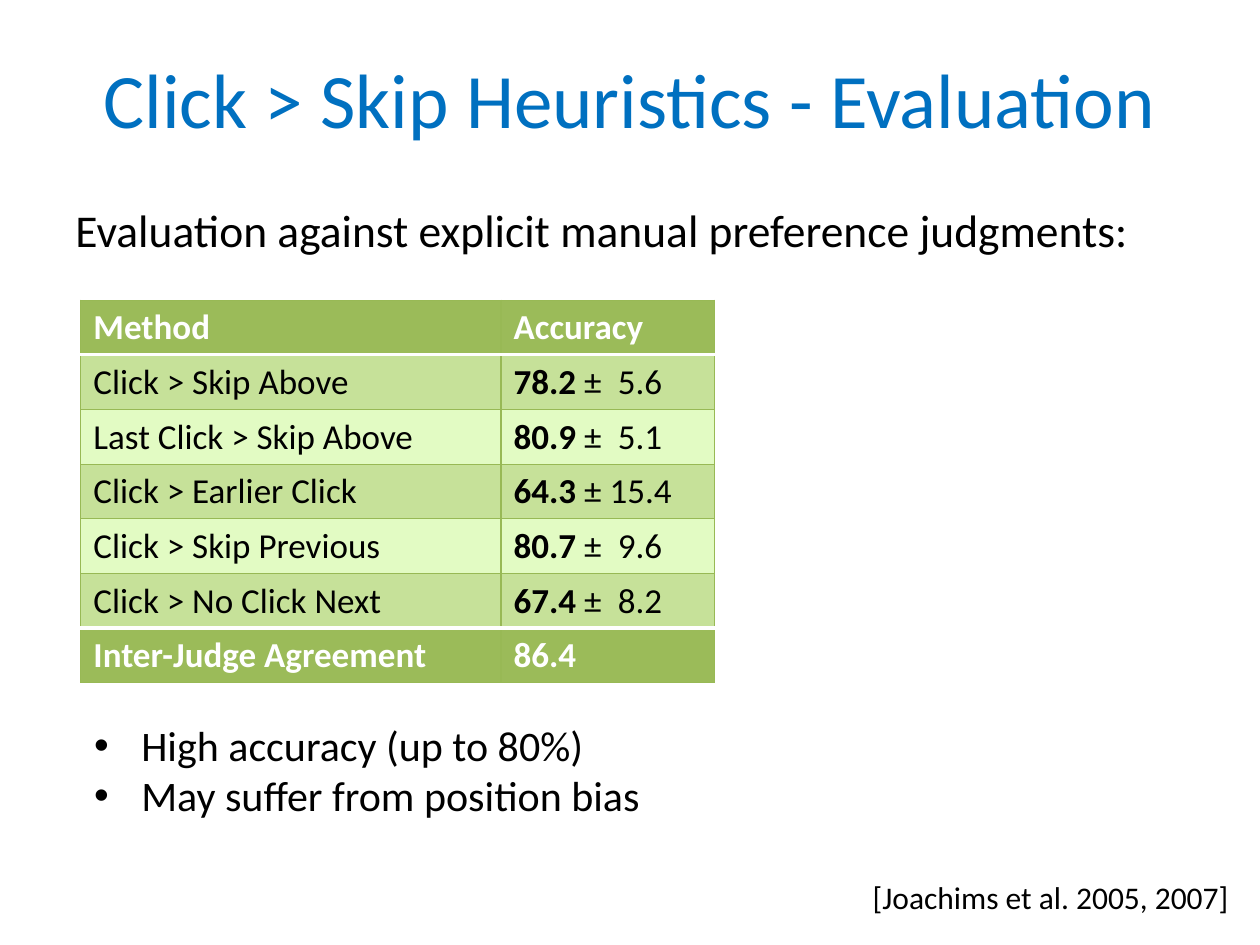
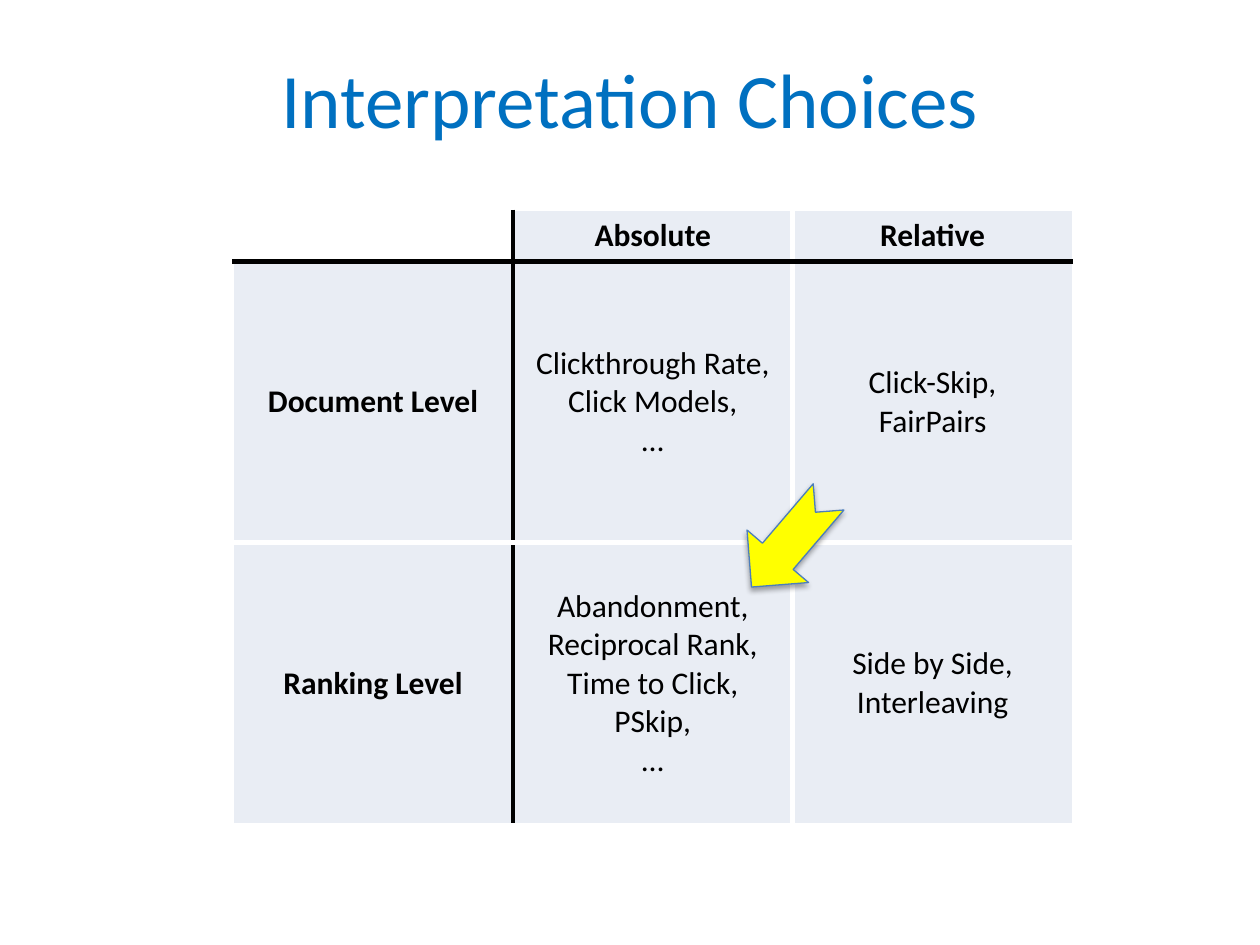
from lxml.etree import SubElement
from pptx import Presentation
from pptx.dml.color import RGBColor
from pptx.enum.shapes import MSO_SHAPE
from pptx.enum.text import MSO_ANCHOR, PP_ALIGN
from pptx.oxml.ns import qn
from pptx.util import Cm, Pt

FONT = "Calibri"
BLACK, WHITE, BLUE = "000000", "FFFFFF", "0070C0"
GREEN, RIM, DARK, LIGHT = "9BBB59", "98B955", "C6E199", "E2FBC3"
PALE, YELLOW, EDGE = "E9EDF4", "FFFF00", "4B7EBC"

SCORES = [
    ("Click > Skip Above", "78.2", "5.6"),
    ("Last Click > Skip Above", "80.9", "5.1"),
    ("Click > Earlier Click", "64.3", "15.4"),
    ("Click > Skip Previous", "80.7", "9.6"),
    ("Click > No Click Next", "67.4", "8.2"),
]
CHOICES = [
    [[], ["Absolute"], ["Relative"]],
    [["Document Level"],
     ["Clickthrough Rate,", "Click Models,", "…"],
     ["Click-Skip,", "FairPairs"]],
    [["Ranking Level"],
     ["Abandonment,", "Reciprocal Rank,", "Time to Click,", "PSkip,", "…"],
     ["Side by Side,", "Interleaving"]],
]


def hue(code):
    """Turn a hex string into a colour."""
    return RGBColor.from_string(code)


def place(box):
    """Turn left, top, width and height in centimetres into lengths."""
    return [Cm(part) for part in box]


def write(para, text, size, color=BLACK, bold=False):
    """Add one formatted run to a paragraph."""
    run = para.add_run()
    run.text = text
    font = run.font
    font.name, font.size, font.bold = FONT, Pt(size), bold
    font.color.rgb = hue(color)


def fill_lines(frame, lines, size, align=PP_ALIGN.LEFT, bold=False):
    """Write each line as a paragraph and return the paragraphs."""
    paras = []
    for i, line in enumerate(lines):
        para = frame.add_paragraph() if i else frame.paragraphs[0]
        para.alignment = align
        write(para, line, size, bold=bold)
        paras.append(para)
    return paras


def add_text(slide, box, lines, size, align=PP_ALIGN.LEFT):
    """Add a wrapping text box and return its paragraphs."""
    frame = slide.shapes.add_textbox(*place(box)).text_frame
    frame.word_wrap = True
    return fill_lines(frame, lines, size, align)


def add_slide(deck, title):
    """Add a title-only slide with the shared title style."""
    slide = deck.slides.add_slide(deck.slide_layouts[5])
    head = slide.shapes.title
    head.left, head.top, head.width, head.height = place((1.27, 0.76, 22.86, 2.41))
    frame = head.text_frame
    frame.vertical_anchor = MSO_ANCHOR.MIDDLE
    frame.paragraphs[0].alignment = PP_ALIGN.CENTER
    write(frame.paragraphs[0], title, 44, BLUE)
    return slide


def add_grid(slide, box, widths, heights):
    """Add a plain table with the given column widths and row heights."""
    table = slide.shapes.add_table(len(heights), len(widths), *place(box)).table
    table.first_row = table.horz_banding = False
    for col, width in zip(table.columns, widths):
        col.width = Cm(width)
    for row, height in zip(table.rows, heights):
        row.height = Cm(height)
    return table


def rule_cell(cell, left, right, top, bottom):
    """Draw the four borders of a cell, each a colour and a width."""
    props = cell._tc.get_or_add_tcPr()
    for side, (color, width) in zip("LRTB", (left, right, top, bottom)):
        line = SubElement(props, qn(f"a:ln{side}"), w=str(Pt(width)))
        solid = SubElement(line, qn("a:solidFill"))
        SubElement(solid, qn("a:srgbClr"), val=color)


def paint(table, fills, across, down):
    """Set borders from the lines across and down, then fill the cells."""
    for r, row in enumerate(table.rows):
        for c, cell in enumerate(row.cells):
            rule_cell(cell, down[c], down[c + 1], across[r], across[r + 1])
            cell.fill.solid()
            cell.fill.fore_color.rgb = hue(fills[r][c])


def add_scores(slide, left, top):
    """Build the accuracy table."""
    widths, heights = [8.47, 4.3], [1.1] * (len(SCORES) + 2)
    box = (left, top, sum(widths), sum(heights))
    table = add_grid(slide, box, widths, heights)
    thin = (RIM, 0.75)
    across = [thin, (WHITE, 2)] + [thin] * 4 + [(WHITE, 2.25), thin]
    bands = [GREEN] + [(DARK, LIGHT)[i % 2] for i in range(len(SCORES))] + [GREEN]
    paint(table, [[band] * 2 for band in bands], across, [thin] * 3)
    ends = {0: ("Method", "Accuracy"), len(SCORES) + 1: ("Inter-Judge Agreement", "86.4")}
    for r, words in ends.items():
        for c, word in enumerate(words):
            write(table.cell(r, c).text_frame.paragraphs[0], word, 20, WHITE, True)
    for r, (name, mean, error) in enumerate(SCORES, 1):
        write(table.cell(r, 0).text_frame.paragraphs[0], name, 20)
        para = table.cell(r, 1).text_frame.paragraphs[0]
        write(para, mean, 20, bold=True)
        if len(error) > 3:
            write(para, f" ± {error}", 20)
        else:
            stops = SubElement(para._p.get_or_add_pPr(), qn("a:tabLst"))
            SubElement(stops, qn("a:tab"), pos=str(Cm(2.1)), algn="l")
            write(para, f" ±\t{error}", 20)


def add_points(slide, box, lines):
    """Add a bulleted list."""
    for para in add_text(slide, box, lines, 24):
        props = para._p.get_or_add_pPr()
        props.set("marL", str(Cm(0.95)))
        props.set("indent", str(-Cm(0.95)))
        SubElement(props, qn("a:buFont"), typeface="Arial")
        SubElement(props, qn("a:buChar"), char="•")


def add_choices(slide, left, top):
    """Build the matrix of interpretation choices."""
    widths, heights = [5.64] * 3, [1.03, 5.67, 5.67]
    table = add_grid(slide, (left, top, sum(widths), sum(heights)), widths, heights)
    rules = [(WHITE, 1), (BLACK, 3), (WHITE, 3), (WHITE, 1)]
    fills = [[PALE if r or c else WHITE for c in range(3)] for r in range(3)]
    paint(table, fills, rules, rules)
    for r, row in enumerate(CHOICES):
        for c, lines in enumerate(row):
            cell = table.cell(r, c)
            cell.vertical_anchor = MSO_ANCHOR.MIDDLE if r else MSO_ANCHOR.TOP
            fill_lines(cell.text_frame, lines, 18, PP_ALIGN.CENTER, r == 0 or c == 0)


def add_arrow(slide, box):
    """Add the tilted arrow with a soft shadow."""
    arrow = slide.shapes.add_shape(MSO_SHAPE.NOTCHED_RIGHT_ARROW, *place(box))
    arrow.rotation = 130.5
    arrow.fill.solid()
    arrow.fill.fore_color.rgb = hue(YELLOW)
    arrow.line.color.rgb = hue(EDGE)
    arrow.line.width = Pt(0.75)
    arrow.shadow.inherit = False
    effects = arrow._element.spPr.find(qn("a:effectLst"))
    shade = SubElement(effects, qn("a:outerShdw"), blurRad=str(Pt(3.1)),
                       dist=str(Pt(1.8)), dir="5400000", rotWithShape="0")
    tone = SubElement(shade, qn("a:srgbClr"), val=BLACK)
    SubElement(tone, qn("a:alpha"), val="35000")


def main():
    """Build both slides and save the deck."""
    deck = Presentation()
    deck.slide_width, deck.slide_height = Cm(25.4), Cm(19.05)

    slide = add_slide(deck, "Click > Skip Heuristics - Evaluation")
    add_text(slide, (1.27, 3.94, 22.86, 1.7),
             ["Evaluation against explicit manual preference judgments:"], 26)
    add_points(slide, (1.65, 14.38, 11.63, 2.31),
               ["High accuracy (up to 80%)", "May suffer from position bias"])
    add_text(slide, (17.2, 17.58, 7.82, 1.02),
             ["[Joachims et al. 2005, 2007]"], 18, PP_ALIGN.RIGHT)
    add_scores(slide, 1.63, 6.05)

    slide = add_slide(deck, "Interpretation Choices")
    add_choices(slide, 4.7, 4.24)
    add_arrow(slide, (14.73, 10.11, 2.39, 1.63))

    deck.save("out.pptx")


if __name__ == "__main__":
    main()
